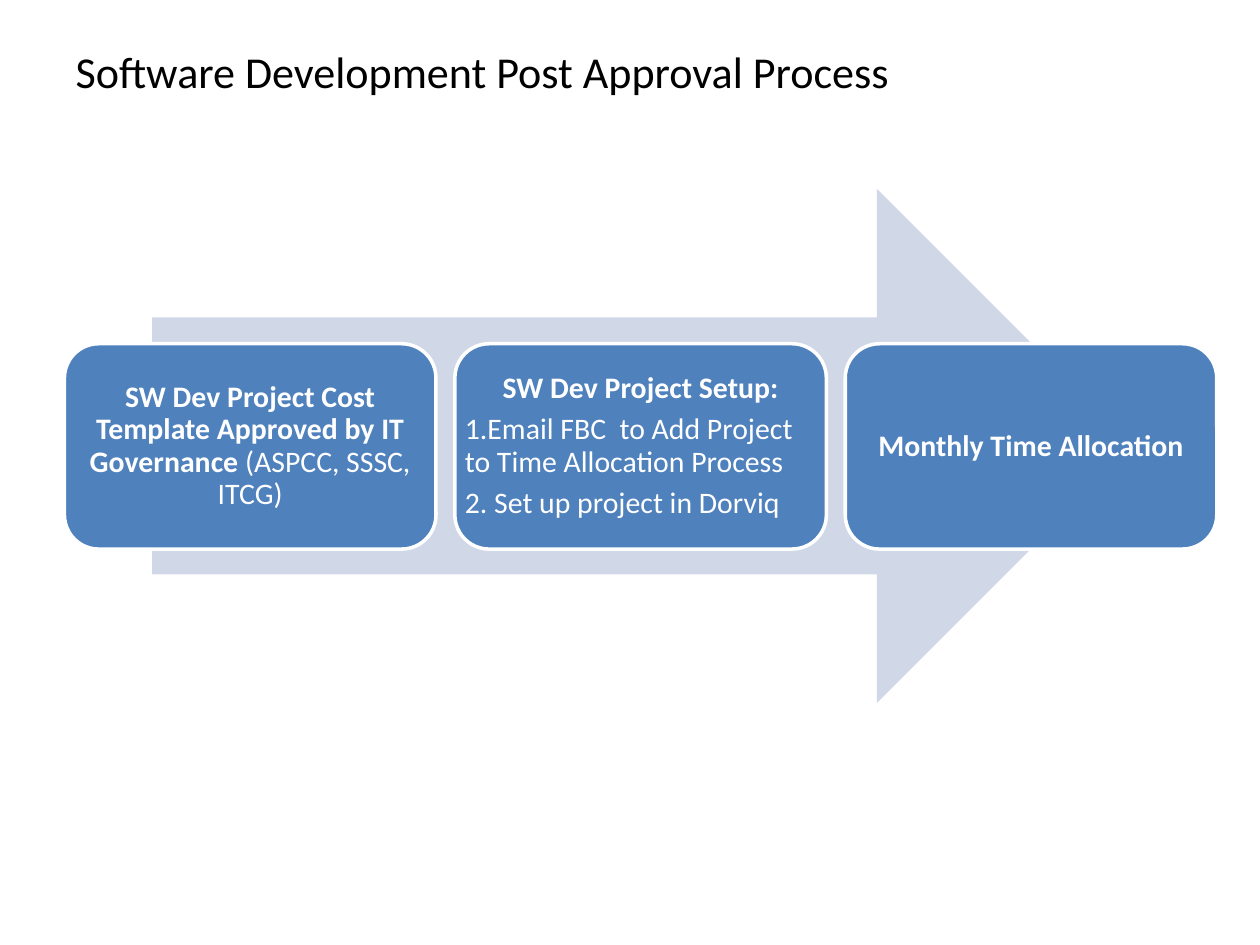
import pptx
import pptx.util
import pptx.dml.color
import pptx.enum.shapes
import pptx.enum.text

Cm = pptx.util.Cm
Pt = pptx.util.Pt
RGBColor = pptx.dml.color.RGBColor
SHAPE = pptx.enum.shapes.MSO_SHAPE
ALIGN = pptx.enum.text.PP_ALIGN
ANCHOR = pptx.enum.text.MSO_ANCHOR

BLACK = RGBColor(0x00, 0x00, 0x00)
WHITE = RGBColor(0xFF, 0xFF, 0xFF)
BLUE = RGBColor(0x4F, 0x81, 0xBD)
PALE_BLUE = RGBColor(0xD0, 0xD8, 0xE8)

STEP_LEFT, STEP_TOP = 1.3, 6.93
STEP_WIDTH, STEP_HEIGHT = 7.49, 4.14
STEP_PITCH = 7.87

STEPS = [
    [(ALIGN.CENTER, [("SW Dev Project Cost Template Approved by IT Governance ", True),
                     ("(ASPCC, SSSC, ITCG)", False)])],
    [(ALIGN.CENTER, [("SW Dev Project Setup:", True)]),
     (ALIGN.LEFT, [("1.Email FBC  to Add Project to Time Allocation Process", False)]),
     (ALIGN.LEFT, [("2. Set up project in Dorviq", False)])],
    [(ALIGN.CENTER, [("Monthly Time Allocation", True)])],
]


def set_attrs(obj, values):
    for name, value in values.items():
        setattr(obj, name, value)


def add_run(p, text, size, color, bold=False):
    r = p.add_run()
    r.text = text
    set_attrs(r.font, {"name": "Calibri", "size": Pt(size), "bold": bold})
    r.font.color.rgb = color


def add_title(s, text):
    sp = s.shapes.title
    set_attrs(sp, {"left": Cm(1.27), "top": Cm(0.76),
                   "width": Cm(22.86), "height": Cm(1.35)})
    tf = sp.text_frame
    set_attrs(tf, {"vertical_anchor": ANCHOR.MIDDLE, "word_wrap": True})
    p = tf.paragraphs[0]
    p.alignment = ALIGN.LEFT
    add_run(p, text, 25.2, BLACK)


def add_filled(s, kind, left, top, width, height, color):
    sp = s.shapes.add_shape(kind, Cm(left), Cm(top), Cm(width), Cm(height))
    sp.shadow.inherit = False
    sp.fill.solid()
    sp.fill.fore_color.rgb = color
    return sp


def add_arrow(s):
    sp = add_filled(s, SHAPE.RIGHT_ARROW, 3.07, 3.81, 19.79, 10.36, PALE_BLUE)
    sp.line.fill.background()


def add_step(s, index, paragraphs):
    sp = add_filled(s, SHAPE.ROUNDED_RECTANGLE, STEP_LEFT + index * STEP_PITCH,
                    STEP_TOP, STEP_WIDTH, STEP_HEIGHT, BLUE)
    sp.line.color.rgb = WHITE
    sp.line.width = Pt(2)
    tf = sp.text_frame
    set_attrs(tf, {"word_wrap": True, "vertical_anchor": ANCHOR.MIDDLE,
                   "margin_left": 0, "margin_right": 0,
                   "margin_top": 0, "margin_bottom": 0})
    for i, (alignment, runs) in enumerate(paragraphs):
        p = tf.add_paragraph() if i else tf.paragraphs[0]
        set_attrs(p, {"alignment": alignment, "line_spacing": 0.9,
                      "space_after": Pt(5.4)})
        for text, bold in runs:
            add_run(p, text, 17, WHITE, bold)


def main():
    prs = pptx.Presentation()
    set_attrs(prs, {"slide_width": Cm(25.4), "slide_height": Cm(19.05)})
    s = prs.slides.add_slide(prs.slide_layouts[5])
    add_title(s, "Software Development Post Approval Process")
    add_arrow(s)
    for index, paragraphs in enumerate(STEPS):
        add_step(s, index, paragraphs)
    prs.save("out.pptx")


if __name__ == "__main__":
    main()
